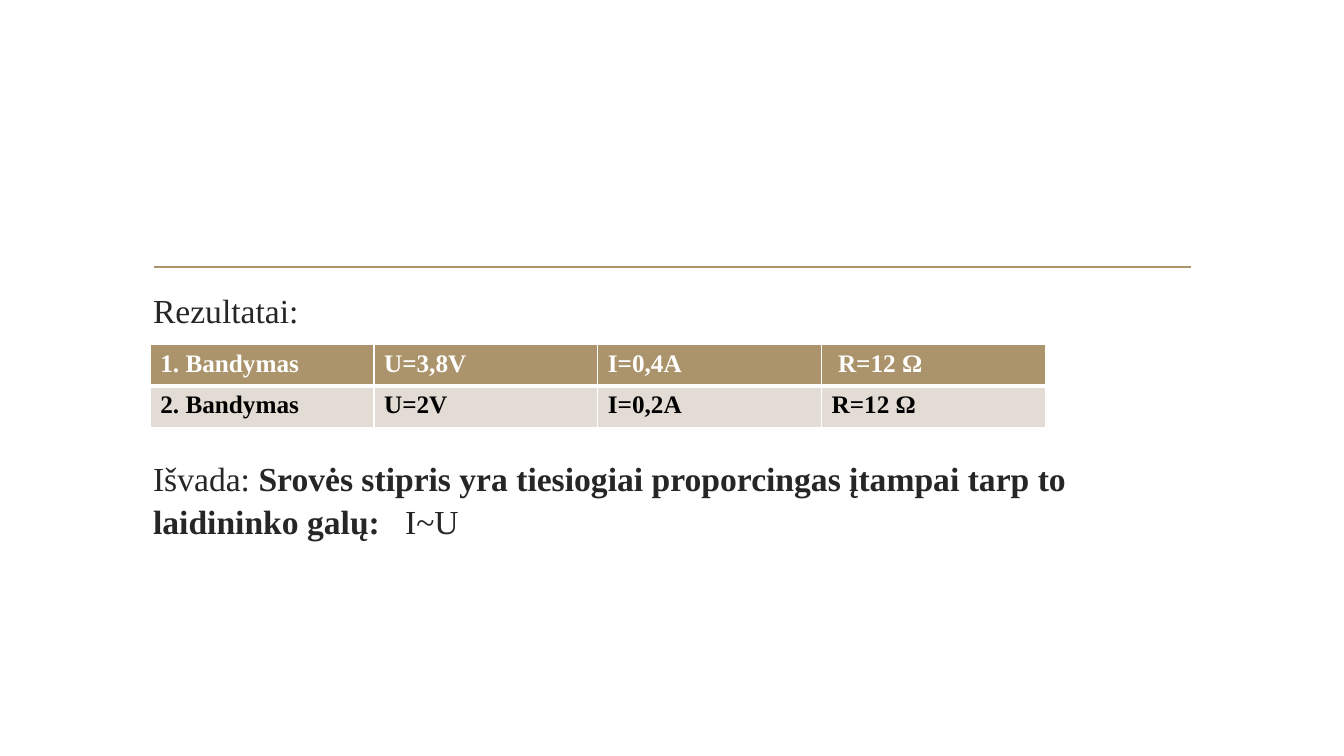
from dataclasses import dataclass

from lxml import etree
from pptx import Presentation
from pptx import util as u
from pptx.dml.color import RGBColor
from pptx.enum import shapes
from pptx.oxml.ns import qn

RESULTS = [
    ("1. Bandymas", "U=3,8V", "I=0,4A", " R=12 Ω"),
    ("2. Bandymas", "U=2V", "I=0,2A", "R=12 Ω"),
]
# Each paragraph: space before in points, then (text, bold) spans
BODY = [
    (0, [("Rezultatai:", False)]),
    (90, [
        ("Išvada: ", False),
        ("Srovės stipris yra tiesiogiai proporcingas įtampai tarp to "
         "laidininko galų:\t", True),
        ("I~U", False),
    ]),
]


@dataclass(frozen=True)
class Theme:
    font: str = "Times New Roman"
    body_size: int = 24
    table_size: int = 18
    ink: str = "262626"
    accent: str = "AB946B"
    pale: str = "E2DCD4"
    white: str = "FFFFFF"
    black: str = "000000"


THEME = Theme()
WIDTH, HEIGHT = 13.33, 7.5
RULE = (1.53, 11.81, 2.65)
BODY_AREA = (1.42, 2.8, 10.5, 3.63)
TABLE_LEFT, TABLE_TOP = 1.49, 3.42
COLUMN, ROW = 2.22, 0.41
FORMULA_TAB = 2.5


def style(span, size, color, bold):
    values = {"name": THEME.font, "size": u.Pt(size), "bold": bold}
    for name, value in values.items():
        setattr(span.font, name, value)
    span.font.color.rgb = RGBColor.from_string(color)


def add_rule(page):
    left, right, top = RULE
    rule = page.shapes.add_connector(
        shapes.MSO_CONNECTOR.STRAIGHT,
        u.Inches(left), u.Inches(top), u.Inches(right), u.Inches(top))
    rule.line.color.rgb = RGBColor.from_string(THEME.accent)
    rule.line.width = u.Pt(1.25)
    etree.SubElement(rule._element.spPr, qn("a:effectLst"))


def add_body(page):
    box = page.shapes.add_textbox(*map(u.Inches, BODY_AREA))
    frame = box.text_frame
    frame.word_wrap = True
    for index, (before, spans) in enumerate(BODY):
        para = frame.add_paragraph() if index else frame.paragraphs[0]
        para.line_spacing = 1.06
        para.space_before = u.Pt(before)
        tabs = etree.SubElement(para._p.get_or_add_pPr(), qn("a:tabLst"))
        etree.SubElement(tabs, qn("a:tab"),
                         pos=str(u.Inches(FORMULA_TAB)), algn="l")
        for words, bold in spans:
            span = para.add_run()
            span.text = words
            style(span, THEME.body_size, THEME.ink, bold)


def set_borders(cell, widths):
    """Draw white cell borders; widths maps a side to points."""
    properties = cell._tc.get_or_add_tcPr()
    for position, (side, width) in enumerate(widths.items()):
        line = etree.Element(qn(f"a:ln{side}"), w=str(u.Pt(width)))
        fill = etree.SubElement(line, qn("a:solidFill"))
        etree.SubElement(fill, qn("a:srgbClr"), val=THEME.white)
        properties.insert(position, line)


def add_results(page):
    rows, columns = len(RESULTS), len(RESULTS[0])
    area = (TABLE_LEFT, TABLE_TOP, columns * COLUMN, rows * ROW)
    table = page.shapes.add_table(rows, columns, *map(u.Inches, area)).table
    for r, values in enumerate(RESULTS):
        header = r == 0
        fill = THEME.accent if header else THEME.pale
        color = THEME.white if header else THEME.black
        widths = {"L": 1, "R": 1, "T": 1 if header else 3,
                  "B": 3 if header else 1}
        for c, value in enumerate(values):
            cell = table.cell(r, c)
            cell.fill.solid()
            cell.fill.fore_color.rgb = RGBColor.from_string(fill)
            set_borders(cell, widths)
            span = cell.text_frame.paragraphs[0].add_run()
            span.text = value
            style(span, THEME.table_size, color, True)


def main():
    deck = Presentation()
    deck.slide_width, deck.slide_height = u.Inches(WIDTH), u.Inches(HEIGHT)
    page = deck.slides.add_slide(deck.slide_layouts.get_by_name("Blank"))
    add_rule(page)
    add_body(page)
    add_results(page)
    deck.save("out.pptx")


if __name__ == "__main__":
    main()
